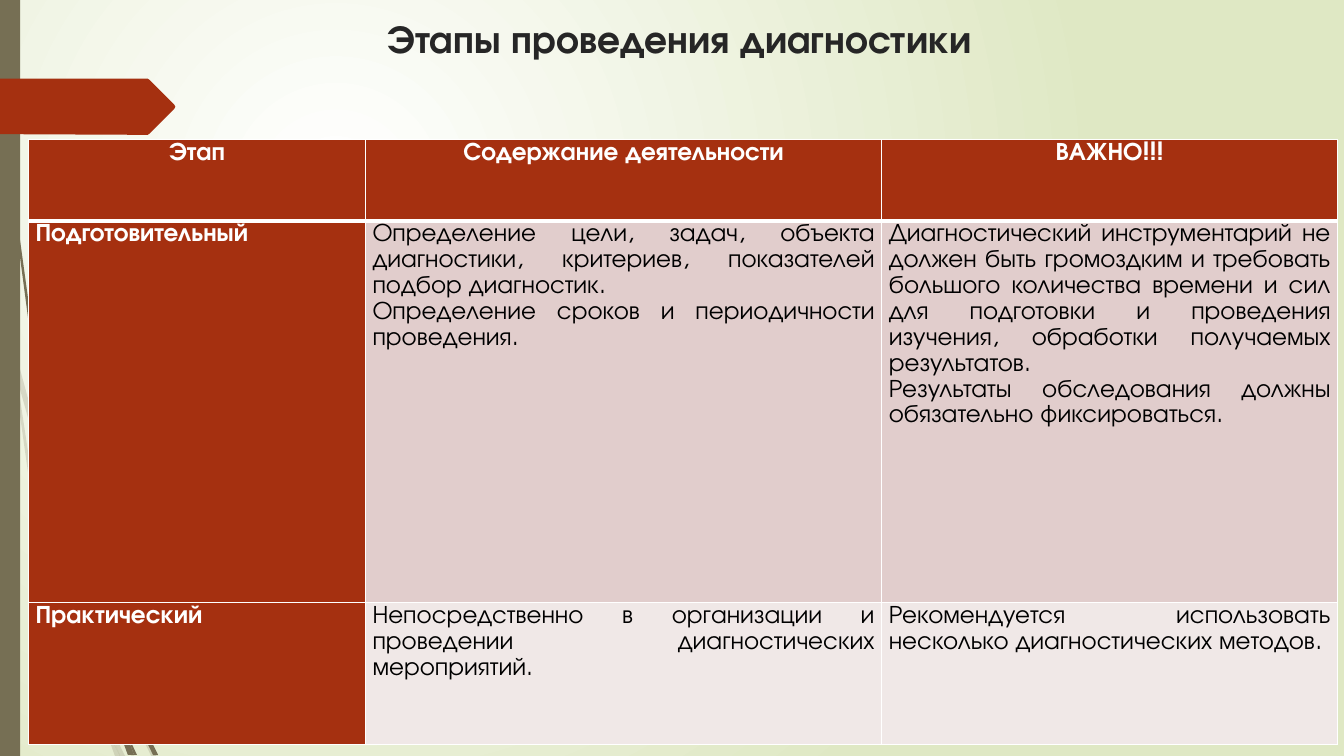
from lxml import etree
from pptx import Presentation
from pptx.dml.color import RGBColor
from pptx.enum.shapes import MSO_SHAPE
from pptx.enum.text import MSO_ANCHOR, PP_ALIGN
from pptx.oxml.ns import qn
from pptx.util import Pt

RECT = MSO_SHAPE.RECTANGLE
TOP = MSO_ANCHOR.TOP
CENTER, JUSTIFY = PP_ALIGN.CENTER, PP_ALIGN.JUSTIFY

COLORS = {
    "white": "FFFFFF", "black": "000000", "title": "262626", "red": "A53010",
    "olive": "766F54", "green": "DFE8C4", "rose": "E1CDCC", "pale": "F0E8E7",
}

LIGHT_WISPS = [
    [(41.8, 375.8), (60.5, 431.3), (61.2, 421.9), (44.6, 374.4),
     (10.1, 248.4), (12.2, 270.7)],
    [(66.2, 437), (63.4, 429.1), (63.4, 439.2), (88.6, 499.7),
     (108, 540), (111.6, 540), (91.4, 498.2)],
    [(85.7, 540), (89.3, 540), (75.6, 511.9)],
    [(67, 491.8), (50.4, 445.7), (22.3, 337.7), (12.2, 270.7), (7.9, 252),
     (20.2, 338.4), (46.8, 447.1), (66.2, 499), (72.7, 514.1), (71.3, 509)],
    [(72.7, 514.1), (82.1, 540), (85.7, 540)],
    [(69.1, 498.2), (67, 491.8), (71.3, 509), (72.7, 514.1),
     (85.7, 540), (75.6, 511.9)],
]
DARK_WISPS = [
    [(5, 79.2), (12.2, 167.8), (23.8, 255.6), (40.3, 343.4), (41, 346.3),
     (39.6, 326.2), (25.9, 255.6), (13.7, 167), (5.8, 78.5), (3.6, 34.6),
     (2.9, 0), (2.2, 0), (2.9, 34.6)],
    [(81.4, 467.3), (79.2, 461.5), (79.9, 472.3), (95, 509.8),
     (109.4, 539.3), (113, 539.3), (97.9, 508.3)],
    [(95.8, 539.3), (97.9, 539.3), (87.8, 517.7)],
    [(84.2, 519.8), (91.4, 539.3), (94.3, 539.3)],
    [(83.5, 508.3), (79.2, 497.5), (83.5, 516.2), (84.2, 519.8),
     (93.6, 539.3), (95.8, 539.3), (87.8, 517.7)],
]
ARROW = [(0, 56.2), (105.5, 56.2), (106.6, 56.9), (124.6, 74.9), (125.2, 76.2),
         (124.6, 77.6), (106.6, 95.6), (105.5, 96.3), (0, 95.8)]

COL_WIDTHS = [240.7, 368.8, 325.6]
ROW_HEIGHTS = [58.3, 272.9, 101.5]
ROW_FILLS = ["red", "rose", "pale"]
STAGES = [
    ["Этап", "Содержание деятельности", "ВАЖНО!!!"],
    ["Подготовительный",
     "Определение цели, задач, объекта диагностики, критериев, показателей "
     "подбор диагностик.\n"
     "Определение сроков и периодичности проведения.",
     "Диагностический инструментарий не должен быть громоздким и требовать "
     "большого количества времени и сил для подготовки и проведения изучения, "
     "обработки получаемых результатов.\n"
     "Результаты обследования должны обязательно фиксироваться."],
    ["Практический",
     "Непосредственно в организации и проведении диагностических мероприятий.",
     "Рекомендуется использовать несколько диагностических методов."],
]


def rgb(color):
    return RGBColor.from_string(COLORS[color])


def set_all(obj, values):
    for name, value in values.items():
        setattr(obj, name, value)


class SlideBuilder:
    """Holds the shared font and the slide being built."""

    font = "TeX Gyre Adventor"

    def __init__(self, slide):
        self.s = slide

    def background(self, inner, outer):
        """Radial gradient centred in the upper left of the slide."""
        fill = self.s.background.fill
        fill.gradient()
        for i, color in enumerate((inner, outer)):
            stop = fill.gradient_stops[i]
            stop.color.rgb = rgb(color)
            stop.position = i
        grad = self.s.element.find(".//" + qn("a:gradFill"))
        grad.remove(grad.find(qn("a:lin")))
        circle = etree.SubElement(grad, qn("a:path"), path="circle")
        etree.SubElement(circle, qn("a:fillToRect"),
                         l="50000", t="50000", r="100000", b="100000")

    def paint(self, sp, color, opacity=100):
        sp.shadow.inherit = False
        sp.fill.solid()
        sp.fill.fore_color.rgb = rgb(color)
        sp.line.fill.background()
        if opacity < 100:
            clr = sp.element.spPr.find(".//" + qn("a:srgbClr"))
            etree.SubElement(clr, qn("a:alpha"), val=str(opacity * 1000))

    def outline(self, points, color, opacity=100):
        start, *rest = [(Pt(x), Pt(y)) for x, y in points]
        builder = self.s.shapes.build_freeform(*start)
        builder.add_line_segments(rest)
        self.paint(builder.convert_to_shape(), color, opacity)

    def bar(self, box, color):
        self.paint(self.s.shapes.add_shape(RECT, *map(Pt, box)), color)

    def text(self, tf, text, size, color, bold, align, spacing=1.0):
        for i, line in enumerate(text.split("\n")):
            p = tf.paragraphs[0] if i == 0 else tf.add_paragraph()
            set_all(p, {"alignment": align, "line_spacing": spacing,
                        "space_before": Pt(0), "space_after": Pt(0)})
            r = p.add_run()
            r.text = line
            set_all(r.font, {"name": self.font, "size": Pt(size), "bold": bold})
            r.font.color.rgb = rgb(color)

    def title(self, text, box):
        sp = self.s.shapes.title
        set_all(sp, dict(zip(("left", "top", "width", "height"), map(Pt, box))))
        set_all(sp.text_frame, {"word_wrap": True, "vertical_anchor": TOP})
        self.text(sp.text_frame, text, 28, "title", True, CENTER)

    def borders(self, cell, color, widths):
        """Put the edge lines ahead of the cell fill, as the schema asks."""
        tc_pr = cell._tc.get_or_add_tcPr()
        for i, (side, width) in enumerate(widths.items()):
            ln = etree.Element(qn("a:ln" + side), w=str(Pt(width)))
            fill = etree.SubElement(ln, qn("a:solidFill"))
            etree.SubElement(fill, qn("a:srgbClr"), val=COLORS[color])
            tc_pr.insert(i, ln)

    def table(self, rows, left, top):
        size = sum(COL_WIDTHS), sum(ROW_HEIGHTS)
        table = self.s.shapes.add_table(
            len(rows), len(COL_WIDTHS), *map(Pt, (left, top, *size))).table
        for col, width in zip(table.columns, COL_WIDTHS):
            col.width = Pt(width)
        for i, texts in enumerate(rows):
            table.rows[i].height = Pt(ROW_HEIGHTS[i])
            for j, text in enumerate(texts):
                cell = table.cell(i, j)
                head = i == 0 or j == 0
                set_all(cell, {"margin_left": Pt(5), "margin_right": Pt(5),
                               "margin_top": 0, "margin_bottom": 0,
                               "vertical_anchor": TOP})
                cell.fill.solid()
                cell.fill.fore_color.rgb = rgb("red" if head else ROW_FILLS[i])
                self.borders(cell, "white", {"L": 1, "R": 1,
                                             "T": 3 if i == 1 else 1,
                                             "B": 3 if i == 0 else 1})
                self.text(cell.text_frame, text, 18,
                          "white" if head else "black", head,
                          CENTER if i == 0 else JUSTIFY, 1.1)


def main():
    prs = Presentation()
    prs.slide_width, prs.slide_height = Pt(960), Pt(540)
    b = SlideBuilder(prs.slides.add_slide(prs.slide_layouts[5]))
    b.background("white", "green")
    for wisp in LIGHT_WISPS:
        b.outline(wisp, "olive", 20)
    for wisp in DARK_WISPS:
        b.outline(wisp, "olive")
    b.bar((0, 0, 14.4, 540), "olive")
    b.outline(ARROW, "red")
    b.title("Этапы проведения диагностики", (15.1, 6.5, 940.3, 59.8))
    b.table(STAGES, 20.4, 99.4)
    prs.save("out.pptx")


if __name__ == "__main__":
    main()
